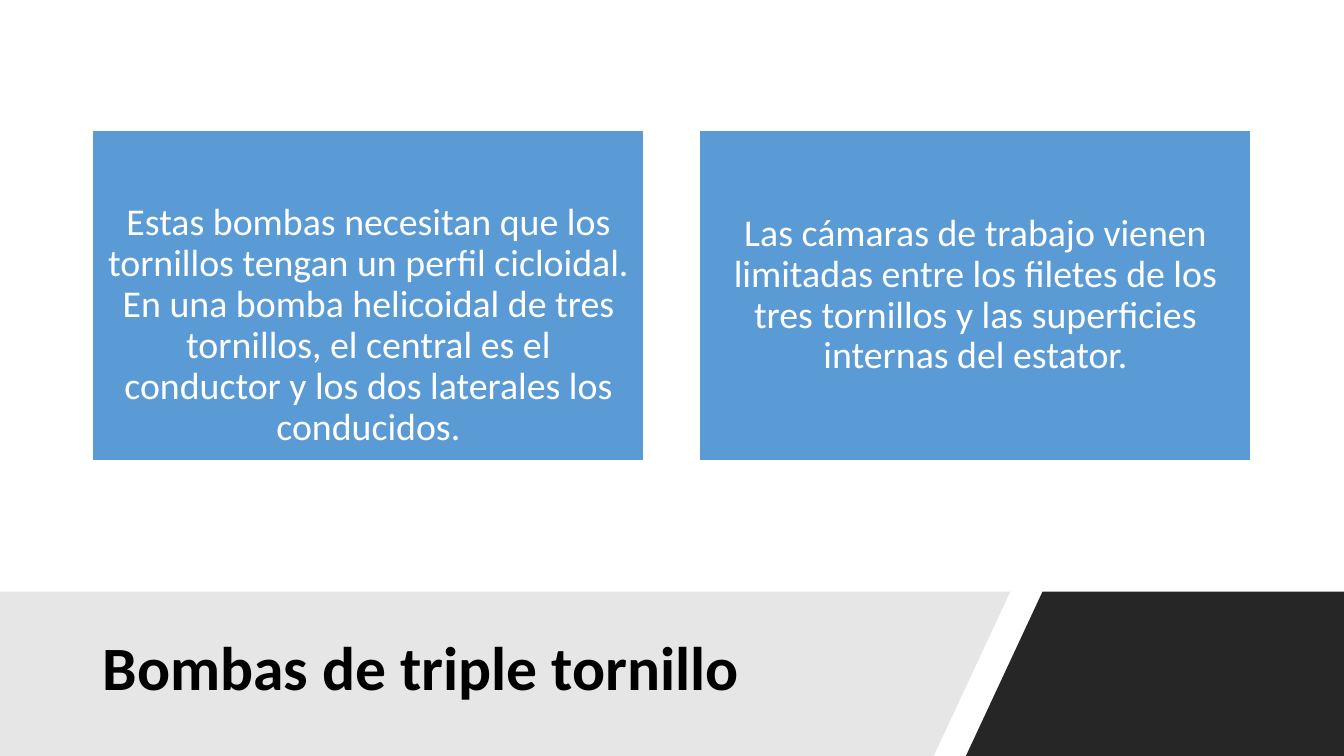
from dataclasses import dataclass

from pptx import Presentation
from pptx.dml.color import RGBColor as Rgb
from pptx.enum.shapes import MSO_SHAPE as Kind
from pptx.enum.text import MSO_ANCHOR as Anchor, PP_ALIGN as Align
from pptx.shapes.autoshape import Shape
from pptx.slide import Slide
from pptx.text.text import TextFrame
from pptx.util import Emu, Inches, Pt

WIDE, HIGH = Inches(13.33), Inches(7.5)
FONT = "Calibri"
HUES = {"card": "5B9BD5", "light": "E7E6E6", "dark": "262626",
        "white": "FFFFFF", "black": "000000"}

# Places are percentages of the slide's width and height
LEFT = 6.9
CARD_TOP, CARD_W, CARD_H, GAP = 17.2, 41.03, 43.73, 4.13
BAND_TOP, SLANT = 78.27, 5.7
PAD = 0.11  # inches


@dataclass
class Card:
    text: str
    drop: float  # extra space above the text, in inches


@dataclass
class Band:
    hue: str
    top: tuple[float, float]  # left and right end of the top edge
    base: tuple[float, float]  # left and right end of the bottom edge


CARDS = [
    Card("Estas bombas necesitan que los tornillos tengan un perfil cicloidal. "
         "En una bomba helicoidal de tres tornillos, el central es el "
         "conductor y los dos laterales los conducidos.", 0.6),
    Card("Las cámaras de trabajo vienen limitadas entre los filetes de los "
         "tres tornillos y las superficies internas del estator.", 0),
]
BANDS = [
    Band("dark", (77.57, 100), (77.57 - SLANT, 100)),
    Band("light", (0, 75.17), (0, 75.17 - SLANT)),
]


def across(share: float) -> Emu:
    return Emu(round(WIDE * share / 100))


def down(share: float) -> Emu:
    return Emu(round(HIGH * share / 100))


def paint(shape: Shape, hue: str) -> None:
    shape.shadow.inherit = False
    shape.fill.solid()
    shape.fill.fore_color.rgb = Rgb.from_string(HUES[hue])


def write(frame: TextFrame, text: str, size: int, hue: str, align: Align,
          bold: bool = False) -> None:
    frame.text = text
    frame.word_wrap = True
    frame.vertical_anchor = Anchor.MIDDLE
    para = frame.paragraphs[0]
    para.alignment = align
    para.line_spacing = 0.9
    font = para.runs[0].font
    font.name, font.size, font.bold = FONT, Pt(size), bold
    font.color.rgb = Rgb.from_string(HUES[hue])


def draw_band(slide: Slide, band: Band) -> None:
    (tl, tr), (bl, br) = band.top, band.base
    pen = slide.shapes.build_freeform(across(tl), down(BAND_TOP))
    pen.add_line_segments([(across(tr), down(BAND_TOP)),
                           (across(br), HIGH), (across(bl), HIGH)])
    shape = pen.convert_to_shape()
    paint(shape, band.hue)
    shape.line.fill.background()


def draw_card(slide: Slide, card: Card, col: int) -> None:
    shape = slide.shapes.add_shape(
        Kind.RECTANGLE, across(LEFT + col * (CARD_W + GAP)), down(CARD_TOP),
        across(CARD_W), down(CARD_H))
    paint(shape, "card")
    shape.line.color.rgb = Rgb.from_string(HUES["white"])
    shape.line.width = Pt(1)
    frame = shape.text_frame
    frame.margin_left = frame.margin_right = frame.margin_bottom = Inches(PAD)
    frame.margin_top = Inches(PAD + card.drop)
    write(frame, card.text, 27, "white", Align.CENTER)


def main() -> None:
    deck = Presentation()
    deck.slide_width, deck.slide_height = WIDE, HIGH
    slide = deck.slides.add_slide(deck.slide_layouts[6])

    # Bottom bands
    for band in BANDS:
        draw_band(slide, band)

    # Title
    box = slide.shapes.add_textbox(across(LEFT), down(80.67),
                                   across(63.32), down(16))
    write(box.text_frame, "Bombas de triple tornillo", 44, "black",
          Align.LEFT, bold=True)

    # Text cards
    for col, card in enumerate(CARDS):
        draw_card(slide, card, col)

    deck.save("out.pptx")


if __name__ == "__main__":
    main()
